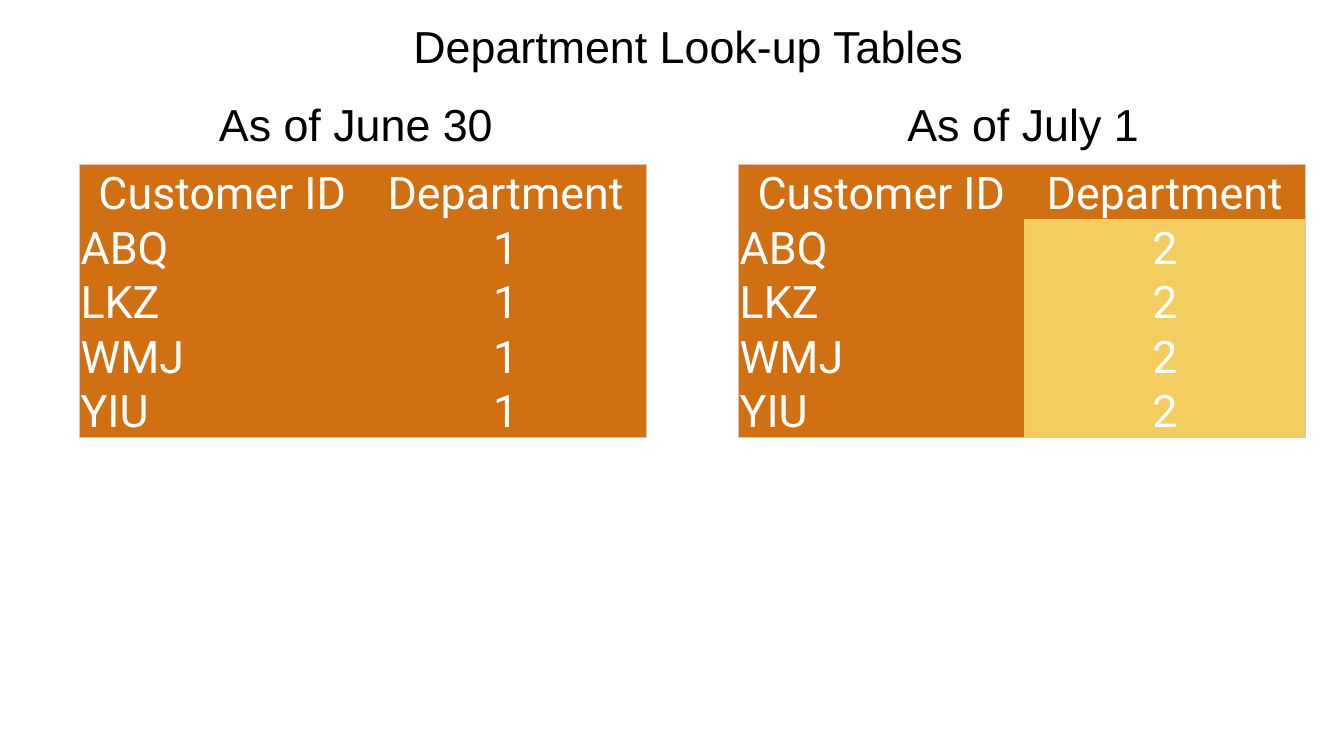
from dataclasses import dataclass

from pptx import Presentation
from pptx.dml.color import RGBColor
from pptx.enum.text import MSO_ANCHOR, MSO_AUTO_SIZE, PP_ALIGN
from pptx.oxml.ns import qn
from pptx.util import Cm, Pt
from lxml.etree import SubElement


@dataclass(frozen=True)
class Theme:
    heading_font: str = "Arial"
    table_font: str = "Roboto"
    size: float = 32
    line_spacing: float = 0.9
    border_width: float = 0.75
    ink: str = "000000"
    table_ink: str = "FFFFFF"
    cell: str = "D17012"
    changed_cell: str = "F3CD60"
    border: str = "DFC5B9"


@dataclass(frozen=True)
class Box:
    left: float
    top: float
    width: float
    height: float


THEME = Theme()
CUSTOMERS = ["ABQ", "LKZ", "WMJ", "YIU"]
COLUMN_WIDTHS = [7.19, 7.09]
CAPTION_HEIGHT = 1.5
CAPTION_GAP = 0.18


def format_text(text_frame, text, font_name, color, alignment):
    text_frame.text = text
    paragraph = text_frame.paragraphs[0]
    paragraph.alignment = alignment
    paragraph.line_spacing = THEME.line_spacing
    font = paragraph.runs[0].font
    font.name = font_name
    font.size = Pt(THEME.size)
    font.color.rgb = RGBColor.from_string(color)


def add_heading(slide, box, text, alignment):
    shape = slide.shapes.add_textbox(
        Cm(box.left), Cm(box.top), Cm(box.width), Cm(box.height))
    text_frame = shape.text_frame
    text_frame.word_wrap = False
    text_frame.auto_size = MSO_AUTO_SIZE.SHAPE_TO_FIT_TEXT
    format_text(text_frame, text, THEME.heading_font, THEME.ink, alignment)


def set_borders(cell, visible_sides):
    """Outline the given sides; the others get no line."""
    properties = cell._tc.get_or_add_tcPr()
    for position, side in enumerate(["L", "R", "T", "B"]):
        line = SubElement(properties, qn(f"a:ln{side}"))
        properties.remove(line)
        properties.insert(position, line)
        if side in visible_sides:
            line.set("w", str(Pt(THEME.border_width)))
            fill = SubElement(line, qn("a:solidFill"))
            SubElement(fill, qn("a:srgbClr")).set("val", THEME.border)
        else:
            SubElement(line, qn("a:noFill"))


def add_lookup_table(slide, box, department, changed):
    rows = [("Customer ID", "Department")]
    rows += [(customer, department) for customer in CUSTOMERS]
    table = slide.shapes.add_table(
        len(rows), len(COLUMN_WIDTHS),
        Cm(box.left), Cm(box.top), Cm(box.width), Cm(box.height)).table
    table.horz_banding = False
    table.first_row = False
    for column, width in zip(table.columns, COLUMN_WIDTHS):
        column.width = Cm(width)

    for row_index, values in enumerate(rows):
        table.rows[row_index].height = Cm(box.height / len(rows))
        for column_index, value in enumerate(values):
            cell = table.cell(row_index, column_index)
            cell.margin_left = cell.margin_right = cell.margin_top = Cm(0.02)
            cell.margin_bottom = 0
            cell.vertical_anchor = MSO_ANCHOR.BOTTOM
            is_customer = row_index > 0 and column_index == 0
            alignment = PP_ALIGN.LEFT if is_customer else PP_ALIGN.CENTER
            format_text(cell.text_frame, value, THEME.table_font,
                        THEME.table_ink, alignment)

            # Departments that changed stand out
            highlighted = changed and row_index > 0 and column_index == 1
            color = THEME.changed_cell if highlighted else THEME.cell
            cell.fill.solid()
            cell.fill.fore_color.rgb = RGBColor.from_string(color)

            # Only the outside of the table is outlined
            sides = "L" if column_index == 0 else "R"
            if row_index == 0:
                sides += "T"
            if row_index == len(rows) - 1:
                sides += "B"
            set_borders(cell, sides)


def add_dated_panel(slide, box, caption, caption_left, caption_width,
                    department, changed=False):
    caption_box = Box(box.left + caption_left, box.top,
                      caption_width, CAPTION_HEIGHT)
    add_heading(slide, caption_box, caption, PP_ALIGN.RIGHT)
    offset = CAPTION_HEIGHT + CAPTION_GAP
    table_box = Box(box.left, box.top + offset, box.width, box.height - offset)
    add_lookup_table(slide, table_box, department, changed)


def main():
    presentation = Presentation()
    presentation.slide_width = Cm(33.87)
    presentation.slide_height = Cm(19.05)
    slide = presentation.slides.add_slide(presentation.slide_layouts[6])

    # Title
    add_heading(slide, Box(10.11, 0.51, 14.48, 1.5),
                "Department Look-up Tables", PP_ALIGN.CENTER)

    # Tables before and after the change
    width = sum(COLUMN_WIDTHS)
    add_dated_panel(slide, Box(2.01, 2.46, width, 8.56),
                    "As of June 30", 3.2, 7.47, "1")
    add_dated_panel(slide, Box(18.62, 2.46, width, 8.56),
                    "As of July 1", 3.94, 6.4, "2", changed=True)

    presentation.save("out.pptx")


if __name__ == "__main__":
    main()
